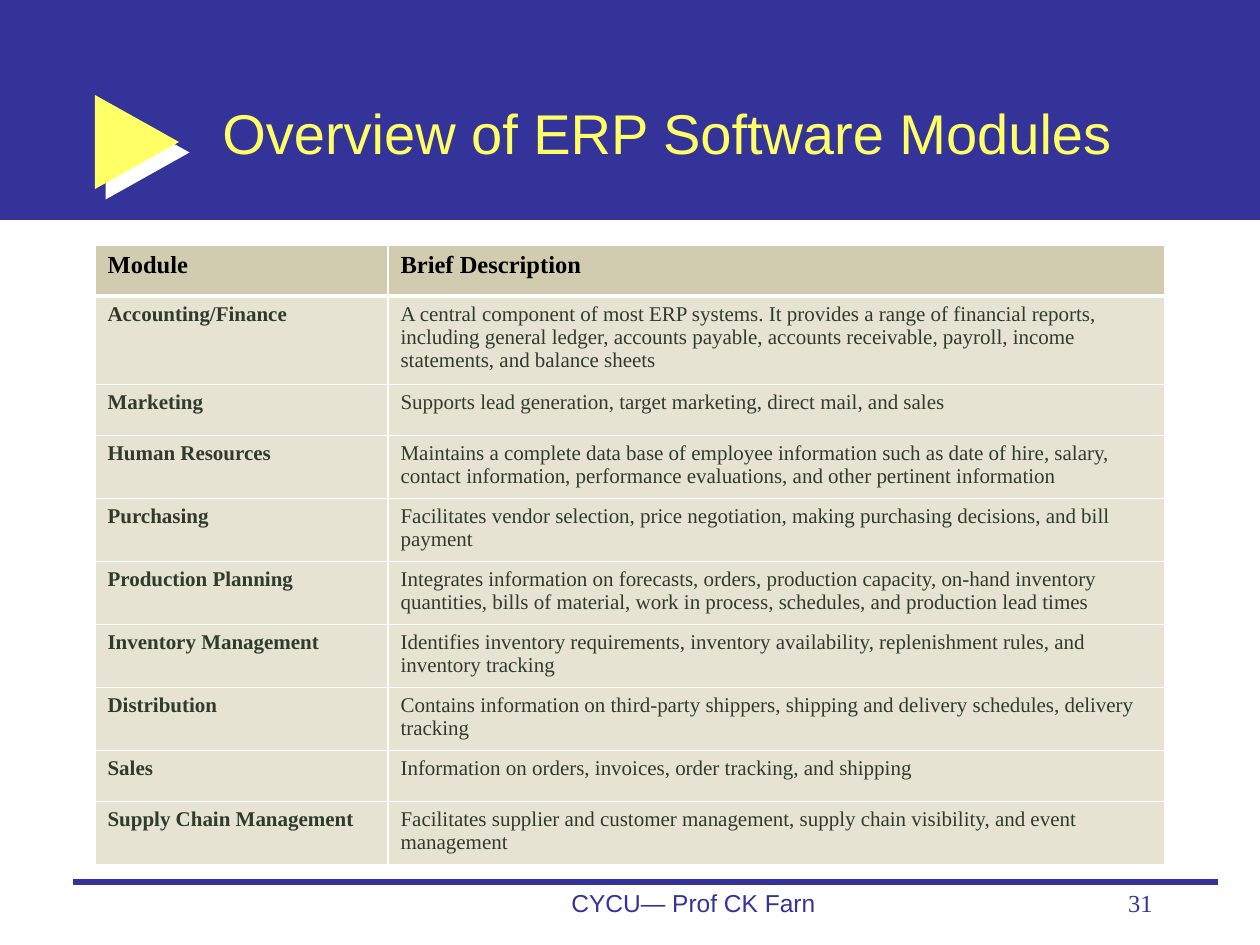
from lxml import etree
from pptx import Presentation, util as u
from pptx.dml.color import RGBColor
from pptx.enum import shapes, text
from pptx.oxml import parse_xml
from pptx.oxml.ns import nsdecls, qn

PX = u.Inches(1) / 126
BLUE = RGBColor(0x33, 0x33, 0x99)
YELLOW = RGBColor(0xFF, 0xFF, 0x66)
WHITE = RGBColor(0xFF, 0xFF, 0xFF)
BLACK = RGBColor(0x00, 0x00, 0x00)
TAN = RGBColor(0xD1, 0xCB, 0xAF)
CREAM = RGBColor(0xE6, 0xE3, 0xD2)
DARK_GREEN = RGBColor(0x30, 0x3B, 0x2C)

MODULES = [
    ("Module", "Brief Description"),
    ("Accounting/Finance",
     "A central component of most ERP systems. It provides a range of financial reports, "
     "including general ledger, accounts payable, accounts receivable, payroll, income "
     "statements, and balance sheets"),
    ("Marketing", "Supports lead generation, target marketing, direct mail, and sales"),
    ("Human Resources",
     "Maintains a complete data base of employee information such as date of hire, salary, "
     "contact information, performance evaluations, and other pertinent information"),
    ("Purchasing",
     "Facilitates vendor selection, price negotiation, making purchasing decisions, "
     "and bill payment"),
    ("Production Planning",
     "Integrates information on forecasts, orders, production capacity, on-hand inventory "
     "quantities, bills of material, work in process, schedules, and production lead times"),
    ("Inventory Management",
     "Identifies inventory requirements, inventory availability, replenishment rules, "
     "and inventory tracking"),
    ("Distribution",
     "Contains information on third-party shippers, shipping and delivery schedules, "
     "delivery tracking"),
    ("Sales", "Information on orders, invoices, order tracking, and shipping"),
    ("Supply Chain Management",
     "Facilitates supplier and customer management, supply chain visibility, "
     "and event management"),
]


def px(*lengths):
    return [round(length * PX) for length in lengths]


def write(frame, words, size, font, color, align=text.PP_ALIGN.LEFT, bold=False):
    frame.word_wrap = True
    paragraph = frame.paragraphs[0]
    paragraph.text = words
    paragraph.alignment = align
    paragraph.font.size = u.Pt(size)
    paragraph.font.name = font
    paragraph.font.bold = bold
    paragraph.font.color.rgb = color


prs = Presentation()
prs.slide_width, prs.slide_height = px(1260, 945)
slide = prs.slides.add_slide(prs.slide_layouts[6])

# Title band
band = slide.shapes.add_shape(shapes.MSO_SHAPE.RECTANGLE, *px(0, 0, 1260, 220))
pointer = slide.shapes.add_shape(shapes.MSO_SHAPE.RIGHT_ARROW, *px(95, 95, 84, 94))
for part, color in ((band, BLUE), (pointer, YELLOW)):
    part.shadow.inherit = False
    part.fill.solid()
    part.fill.fore_color.rgb = color
    part.line.fill.background()

# Yellow pointer: all head, with a solid white shadow
pointer.adjustments[0] = 0.38
pointer.adjustments[1] = 1
effects = pointer._element.spPr.find(qn("a:effectLst"))
effects.append(parse_xml(
    f'<a:outerShdw {nsdecls("a")} dist="{u.Pt(8.5)}" dir="2700000" algn="ctr" '
    f'rotWithShape="0"><a:srgbClr val="{WHITE}"/></a:outerShdw>'))

title = slide.shapes.add_textbox(*px(210, 53, 955, 158)).text_frame
title.vertical_anchor = text.MSO_ANCHOR.MIDDLE
write(title, "Overview of ERP Software Modules", 32, "Arial", YELLOW)

# Footer
rule = slide.shapes.add_connector(shapes.MSO_CONNECTOR.STRAIGHT, *px(73, 882, 1218, 882))
rule.line.color.rgb = BLUE
rule.line.width = u.Pt(3)
etree.SubElement(rule._element.spPr, qn("a:effectLst"))

author = slide.shapes.add_textbox(*px(494, 882, 399, 63)).text_frame
write(author, "CYCU— Prof CK Farn", 14, "Arial", BLUE, text.PP_ALIGN.CENTER)
page_number = slide.shapes.add_textbox(*px(903, 882, 262, 63)).text_frame
write(page_number, "31", 14, "Times New Roman", BLUE, text.PP_ALIGN.RIGHT)

# Module table; rows grow with their text
table = slide.shapes.add_table(len(MODULES), 2, *px(95, 245, 1070, 510)).table
table.horz_banding = False
table.columns[0].width, table.columns[1].width = px(293, 777)
for r, row in enumerate(MODULES):
    table.rows[r].height = px(51)[0]
    header = r == 0
    for c, words in enumerate(row):
        cell = table.cell(r, c)
        # White borders, heavier below the header
        for side in "LRTB":
            heavy = (r, side) in ((0, "B"), (1, "T"))
            cell._tc.get_or_add_tcPr().append(parse_xml(
                f'<a:ln{side} {nsdecls("a")} w="{u.Pt(3 if heavy else 1)}"><a:solidFill>'
                f'<a:srgbClr val="{WHITE}"/></a:solidFill></a:ln{side}>'))
        cell.fill.solid()
        cell.fill.fore_color.rgb = TAN if header else CREAM
        write(cell.text_frame, words, 14 if header else 12, "Times New Roman",
              BLACK if header else DARK_GREEN, bold=header or c == 0)

prs.save("out.pptx")
